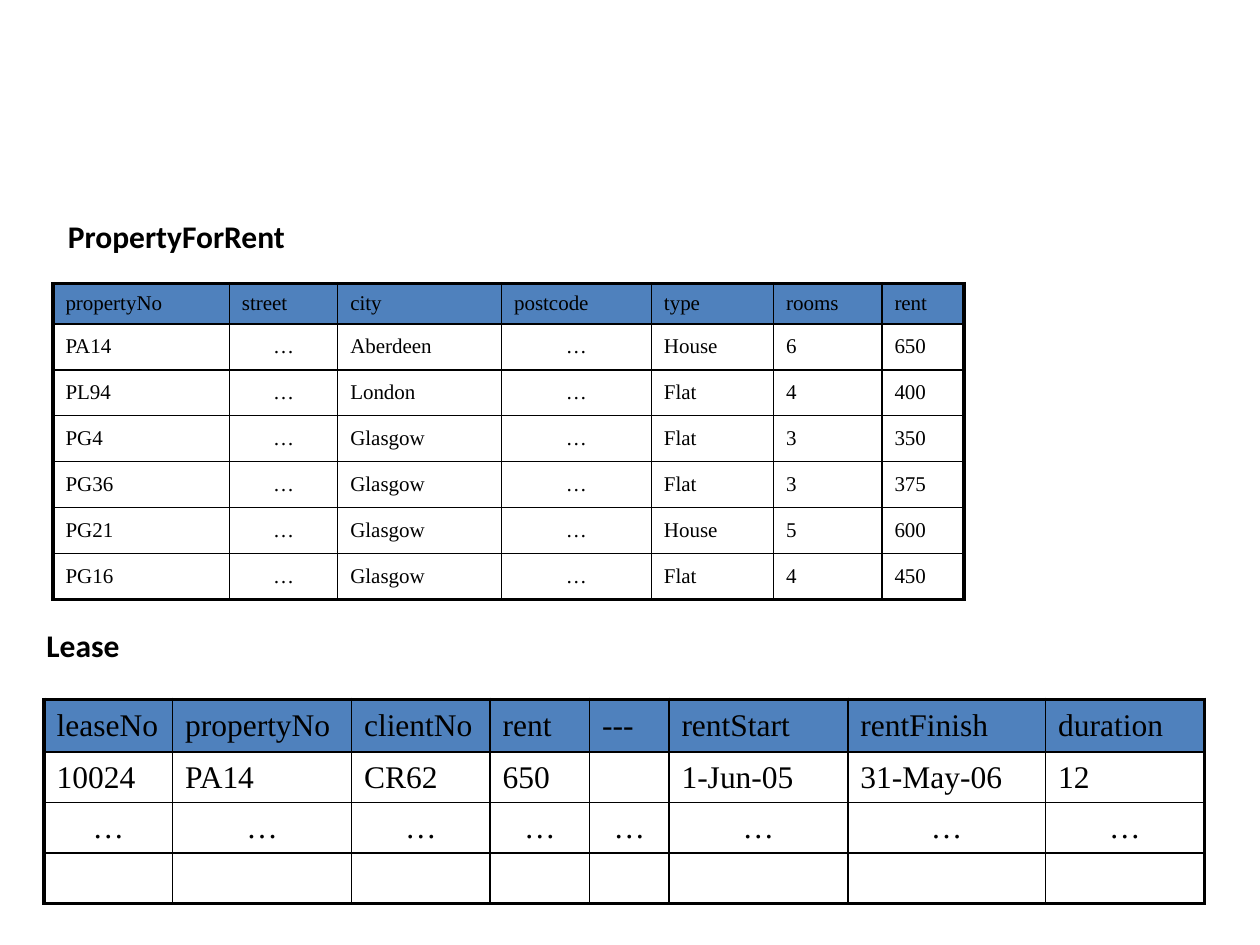
from dataclasses import dataclass

from lxml import etree
from pptx import Presentation
from pptx import util as u
from pptx.dml.color import RGBColor
from pptx.enum import text
from pptx.oxml.ns import qn

INK = {"text": "000000", "line": "000000", "head": "4F81BD"}
THIN, THICK = 1, 2.25


@dataclass
class Grid:
    left: float
    top: float
    cols: list[float]
    head: float
    row: float
    size: float
    data: list[list[str]]


LEASE = Grid(
    0.35, 5.55, [1.02, 1.42, 1.1, 0.79, 0.63, 1.42, 1.57, 1.26], 0.42, 0.4, 18,
    [
        ["leaseNo", "propertyNo", "clientNo", "rent", "---",
         "rentStart", "rentFinish", "duration"],
        ["10024", "PA14", "CR62", "650", "", "1-Jun-05", "31-May-06", "12"],
        ["…"] * 8,
        [""] * 8,
    ],
)
HOMES = Grid(
    0.42, 2.25, [1.4, 0.86, 1.3, 1.19, 0.97, 0.86, 0.65], 0.32, 0.365, 12,
    [
        ["propertyNo", "street", "city", "postcode", "type", "rooms", "rent"],
        ["PA14", "…", "Aberdeen", "…", "House", "6", "650"],
        ["PL94", "…", "London", "…", "Flat", "4", "400"],
        ["PG4", "…", "Glasgow", "…", "Flat", "3", "350"],
        ["PG36", "…", "Glasgow", "…", "Flat", "3", "375"],
        ["PG21", "…", "Glasgow", "…", "House", "5", "600"],
        ["PG16", "…", "Glasgow", "…", "Flat", "4", "450"],
    ],
)


def write(frame, words: str, *, size: float, font: str,
          bold: bool = False, center: bool = False) -> None:
    para = frame.paragraphs[0]
    para.alignment = text.PP_ALIGN.CENTER if center else text.PP_ALIGN.LEFT
    run = para.add_run()
    run.text = words
    run.font.size = u.Pt(size)
    run.font.name = font
    run.font.bold = bold
    run.font.color.rgb = RGBColor.from_string(INK["text"])


def title(slide, words: str, left: float, top: float, high: float) -> None:
    box = slide.shapes.add_textbox(
        u.Inches(left), u.Inches(top), u.Inches(2.68), u.Inches(high))
    box.text_frame.word_wrap = True
    write(box.text_frame, words, size=18, font="Calibri", bold=True)


def border(cell, widths: dict[str, float]) -> None:
    """Put the side lines ahead of the fill, as the schema asks."""
    props = cell._tc.get_or_add_tcPr()
    for spot, (side, width) in enumerate(widths.items()):
        line = etree.Element(qn(f"a:ln{side}"), w=str(u.Pt(width)))
        fill = etree.SubElement(line, qn("a:solidFill"))
        etree.SubElement(fill, qn("a:srgbClr"), val=INK["line"])
        props.insert(spot, line)


def draw(slide, grid: Grid) -> None:
    rows, cols = len(grid.data), len(grid.cols)
    highs = [grid.head] + [grid.row] * (rows - 1)
    table = slide.shapes.add_table(
        rows, cols, u.Inches(grid.left), u.Inches(grid.top),
        u.Inches(sum(grid.cols)), u.Inches(sum(highs))).table
    table.first_row = table.horz_banding = False
    for col, wide in zip(table.columns, grid.cols):
        col.width = u.Inches(wide)
    for row, high in zip(table.rows, highs):
        row.height = u.Inches(high)
    for r, line in enumerate(grid.data):
        for c, words in enumerate(line):
            cell = table.cell(r, c)
            cell.vertical_anchor = text.MSO_ANCHOR.MIDDLE
            write(cell.text_frame, words, size=grid.size,
                  font="Times New Roman", center=words == "…")
            if r == 0:
                cell.fill.solid()
                cell.fill.fore_color.rgb = RGBColor.from_string(INK["head"])
            else:
                cell.fill.background()
            outer = {"L": c == 0, "R": c == cols - 1,
                     "T": r == 0, "B": r == rows - 1}
            border(cell, {side: THICK if edge else THIN
                          for side, edge in outer.items()})


def main() -> None:
    deck = Presentation()
    deck.slide_width, deck.slide_height = u.Inches(10), u.Inches(7.5)
    slide = deck.slides.add_slide(deck.slide_layouts[6])
    title(slide, "Lease", 0.27, 4.92, 0.5)
    draw(slide, LEASE)
    draw(slide, HOMES)
    title(slide, "PropertyForRent", 0.44, 1.67, 0.4)
    deck.save("out.pptx")


if __name__ == "__main__":
    main()
